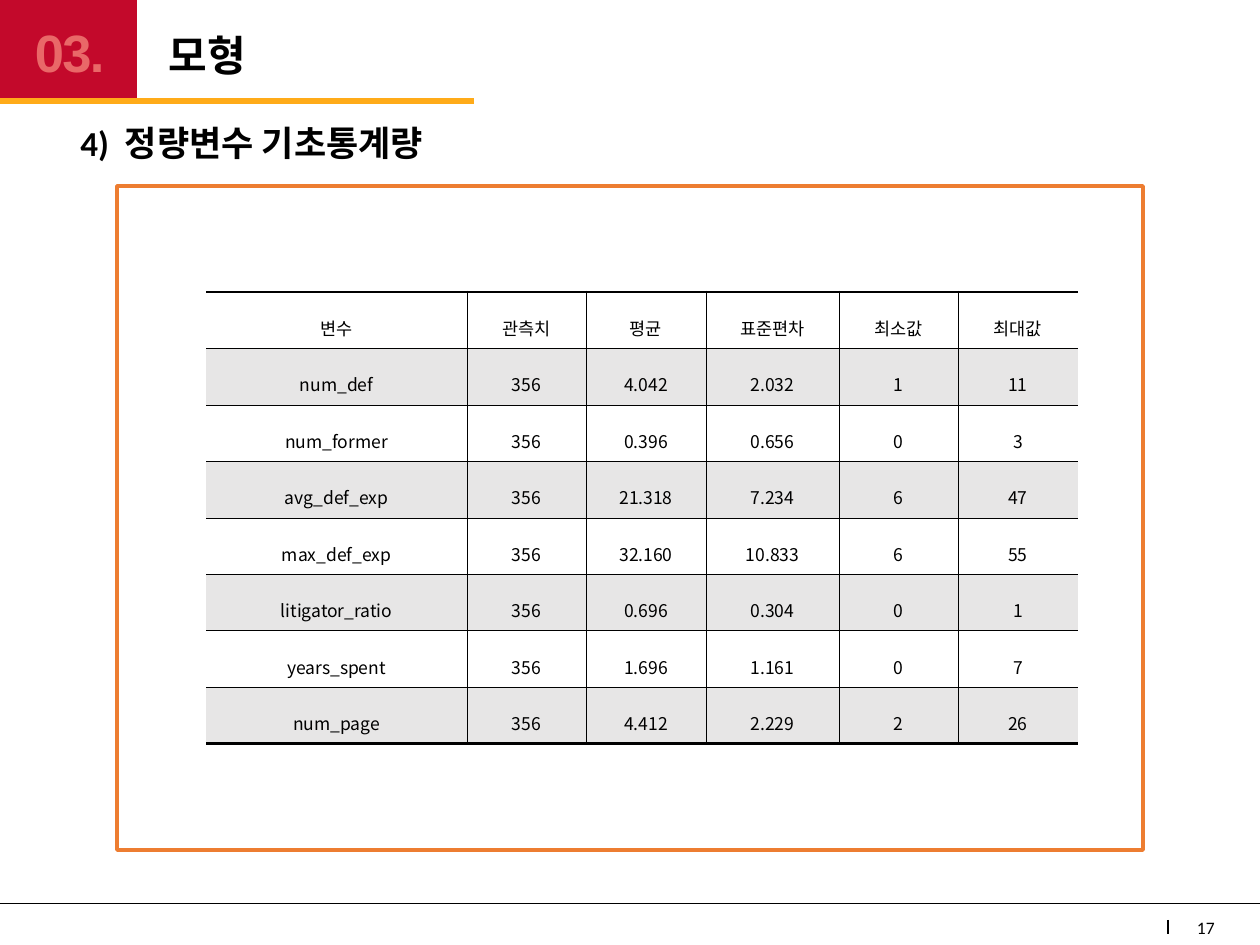
from typing import NamedTuple, Optional

from lxml.etree import SubElement
from pptx import Presentation
from pptx.dml.color import RGBColor as Rgb
from pptx.enum.shapes import MSO_CONNECTOR as Connector, MSO_SHAPE as Preset
from pptx.enum.text import MSO_ANCHOR as Anchor, PP_ALIGN as Align
from pptx.oxml.ns import qn
from pptx.util import Emu, Pt

COLORS = {
    "black": "000000", "white": "FFFFFF", "crimson": "C3092B", "salmon": "E96868",
    "amber": "FFAB19", "orange": "ED7D31", "band": "E7E6E6",
}
KOREAN = "Noto Sans CJK KR"
EMU_PER_PX = 914400 / 126
THIN, THICK = 0.28, 1.7


class Box(NamedTuple):
    left: int
    top: int
    width: int
    height: int


class Rule(NamedTuple):
    start: tuple[int, int]
    end: tuple[int, int]
    color: str
    weight: float


class Panel(NamedTuple):
    box: Box
    fill: Optional[str] = None
    line: Optional[str] = None
    weight: float = 0


class Span(NamedTuple):
    text: str
    tracking: float = 0


class Label(NamedTuple):
    box: Box
    spans: list[Span]
    style: dict
    anchor: Anchor = Anchor.TOP


RULES = [
    Rule((1260, 903), (0, 903), "black", 0.25),
    Rule((0, 101), (474, 101), "amber", 3),
    Rule((1168, 920), (1168, 934), "black", 1.5),
]
BADGE = Panel(Box(0, 0, 137, 101), fill="crimson")
FOOTER_PATCH = Panel(Box(885, 914, 258, 31), fill="white")
FRAME = Panel(Box(117, 186, 1026, 664), line="orange", weight=2)
LABELS = [
    Label(Box(1181, 911, 46, 31), [Span("17")], dict(size=10, align=Align.RIGHT)),
    Label(Box(156, 14, 824, 88), [Span("모형")],
          dict(size=24, bold=True, line_spacing=0.9), Anchor.MIDDLE),
    Label(Box(68, 120, 979, 67),
          [Span("4)"), Span(" ", 4.5), Span("정량변수 기초통계량")],
          dict(size=20, bold=True, line_spacing=0.9, space_before=10)),
    Label(Box(18, 14, 99, 78), [Span("03.", -0.9)],
          dict(size=30, bold=True, font="Arial", color="salmon", align=Align.RIGHT)),
]

TABLE_BOX = Box(206, 292, 872, 452)
COLUMN_WIDTHS = [261, 119, 120, 133, 119, 120]
STATISTICS = [
    ["변수", "관측치", "평균", "표준편차", "최소값", "최대값"],
    ["num_def", "356", "4.042", "2.032", "1", "11"],
    ["num_former", "356", "0.396", "0.656", "0", "3"],
    ["avg_def_exp", "356", "21.318", "7.234", "6", "47"],
    ["max_def_exp", "356", "32.160", "10.833", "6", "55"],
    ["litigator_ratio", "356", "0.696", "0.304", "0", "1"],
    ["years_spent", "356", "1.696", "1.161", "0", "7"],
    ["num_page", "356", "4.412", "2.229", "2", "26"],
]


def px(length: int) -> Emu:
    return Emu(round(length * EMU_PER_PX))


def emus(box: Box) -> list[Emu]:
    return [px(length) for length in box]


def rgb(name: str) -> Rgb:
    return Rgb.from_string(COLORS[name])


def write(frame, spans: list[Span], *, size: float, font: str = "Calibri",
          color: str = "black", bold: bool = False, align: Align = Align.LEFT,
          line_spacing: float = 1.0, space_before: float = 0) -> None:
    para = frame.paragraphs[0]
    para.alignment = align
    para.line_spacing = line_spacing
    para.space_before = Pt(space_before)
    for span in spans:
        run = para.add_run()
        run.text = span.text
        run.font.size, run.font.bold, run.font.name = Pt(size), bold, font
        run.font.color.rgb = rgb(color)
        properties = run.font._element
        SubElement(properties, qn("a:ea"), typeface=KOREAN)
        if span.tracking:
            properties.set("spc", str(round(span.tracking * 100)))


def draw_label(page, label: Label) -> None:
    frame = page.shapes.add_textbox(*emus(label.box)).text_frame
    frame.word_wrap = True
    frame.vertical_anchor = label.anchor
    write(frame, label.spans, **label.style)


def draw_rule(page, rule: Rule) -> None:
    ends = [px(length) for length in (*rule.start, *rule.end)]
    line = page.shapes.add_connector(Connector.STRAIGHT, *ends)
    line.line.color.rgb = rgb(rule.color)
    line.line.width = Pt(rule.weight)
    SubElement(line._element.spPr, qn("a:effectLst"))


def draw_panel(page, panel: Panel) -> None:
    shape = page.shapes.add_shape(Preset.RECTANGLE, *emus(panel.box))
    shape.shadow.inherit = False
    if panel.fill:
        shape.fill.solid()
        shape.fill.fore_color.rgb = rgb(panel.fill)
    else:
        shape.fill.background()
    if panel.line:
        shape.line.color.rgb = rgb(panel.line)
        shape.line.width = Pt(panel.weight)
    else:
        shape.line.fill.background()


def set_borders(cell, weights: dict[str, float]) -> None:
    """Put the cell's borders, in schema order, ahead of its fill."""
    properties = cell._tc.get_or_add_tcPr()
    for index, (side, weight) in enumerate(weights.items()):
        line = SubElement(properties, qn(f"a:ln{side}"), w=str(Pt(weight)))
        if weight:
            paint = SubElement(line, qn("a:solidFill"))
            SubElement(paint, qn("a:srgbClr"), val=COLORS["black"])
        else:
            SubElement(line, qn("a:noFill"))
        properties.insert(index, line)


def draw_table(page, box: Box, widths: list[int], rows: list[list[str]]) -> None:
    last_row, last_column = len(rows) - 1, len(widths) - 1
    table = page.shapes.add_table(len(rows), len(widths), *emus(box)).table
    table.horz_banding = False
    for column, width in zip(table.columns, widths):
        column.width = px(width)
    for r, row in enumerate(rows):
        for c, text in enumerate(row):
            cell = table.cell(r, c)
            cell.vertical_anchor = Anchor.MIDDLE
            cell.margin_left = cell.margin_right = px(9)
            cell.margin_top = cell.margin_bottom = px(2)
            if r % 2:
                cell.fill.solid()
                cell.fill.fore_color.rgb = rgb("band")
            else:
                cell.fill.background()
            set_borders(cell, {
                "L": THIN if c else 0,
                "R": THIN if c < last_column else 0,
                "T": THIN if r else THICK,
                "B": THIN if r < last_row else THICK,
            })
            write(cell.text_frame, [Span(text)], size=10, font=KOREAN,
                  align=Align.CENTER, line_spacing=1.6)


def main() -> None:
    deck = Presentation()
    deck.slide_width, deck.slide_height = px(1260), px(945)
    page = deck.slides.add_slide(deck.slide_layouts[6])

    # Header band and footer rules
    draw_panel(page, BADGE)
    for rule in RULES:
        draw_rule(page, rule)

    # Statistics table
    draw_table(page, TABLE_BOX, COLUMN_WIDTHS, STATISTICS)

    # Page number, title, subtitle and section number
    for label in LABELS:
        draw_label(page, label)

    # Footer patch and content frame
    for panel in (FOOTER_PATCH, FRAME):
        draw_panel(page, panel)

    deck.save("out.pptx")


if __name__ == "__main__":
    main()
